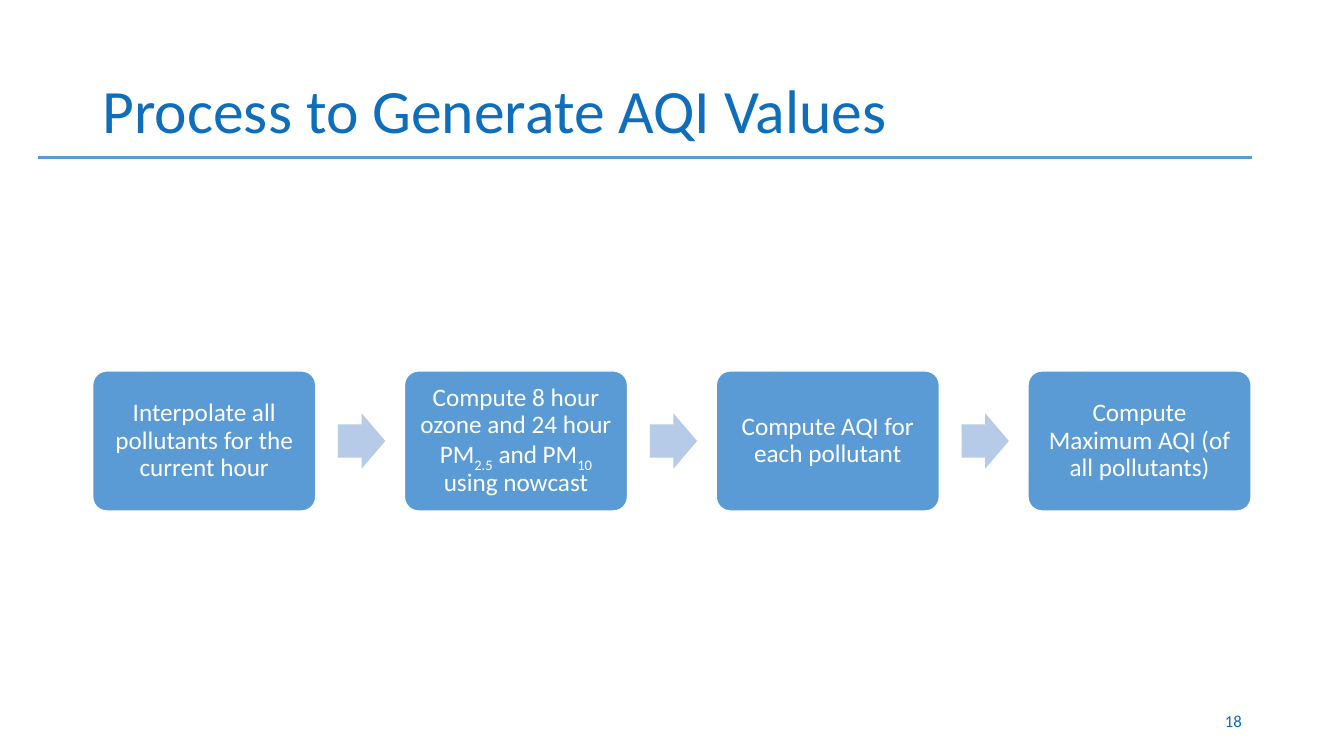
from lxml.etree import SubElement
from pptx import Presentation
from pptx.dml.color import RGBColor
from pptx.enum.shapes import MSO_CONNECTOR, MSO_SHAPE
from pptx.enum.text import MSO_ANCHOR, PP_ALIGN
from pptx.oxml.ns import qn
from pptx.util import Pt

NAVY = RGBColor(0x0E, 0x6E, 0xBB)
BLUE = RGBColor(0x5B, 0x9B, 0xD5)
PALE = RGBColor(0xB5, 0xCB, 0xE7)
WHITE = RGBColor(0xFF, 0xFF, 0xFF)

LEFT, TOP, WIDE, HIGH = 66.24, 265, 159.3, 100
PITCH = 222.7
ARROW_W, ARROW_H, ARROW_GAP = 33.8, 39.6, 15.9

STEPS = [
    ["Interpolate all pollutants for the current hour"],
    ["Compute 8 hour ozone and 24 hour PM", "2.5", " and PM", "10", " using nowcast"],
    ["Compute AQI for each pollutant"],
    ["Compute Maximum AQI (of all pollutants)"],
]


def write(shape, parts, size, color, align=PP_ALIGN.LEFT, spacing=1.0, inset=None):
    """Fill a shape with one paragraph, in which every second part is a subscript."""
    frame = shape.text_frame
    frame.word_wrap = True
    frame.vertical_anchor = MSO_ANCHOR.MIDDLE
    if inset is not None:
        frame.margin_left = frame.margin_right = Pt(inset)
        frame.margin_top = frame.margin_bottom = Pt(inset)
    para = frame.paragraphs[0]
    para.alignment = align
    para.line_spacing = spacing
    for index, part in enumerate(parts):
        run = para.add_run()
        run.text = part
        run.font.name = "Calibri"
        run.font.size = Pt(size)
        run.font.color.rgb = color
        if index % 2:
            run.font._element.set("baseline", "-25000")


def add_label(slide, left, top, width, height, text, size, **style):
    """Add a text box with one line of navy text."""
    box = slide.shapes.add_textbox(Pt(left), Pt(top), Pt(width), Pt(height))
    write(box, [text], size, NAVY, **style)


def add_rule(slide, left, right, top):
    """Add the line below the title."""
    rule = slide.shapes.add_connector(
        MSO_CONNECTOR.STRAIGHT, Pt(left), Pt(top), Pt(right), Pt(top))
    rule.line.color.rgb = BLUE
    rule.line.width = Pt(2)
    SubElement(rule._element.spPr, qn("a:effectLst"))


def add_block(slide, kind, left, top, width, height, fill, adjust):
    """Add a flat preset shape without an outline."""
    block = slide.shapes.add_shape(kind, Pt(left), Pt(top), Pt(width), Pt(height))
    block.shadow.inherit = False
    block.fill.solid()
    block.fill.fore_color.rgb = fill
    block.line.fill.background()
    for index, value in enumerate(adjust):
        block.adjustments[index] = value
    return block


def add_step(slide, left, parts):
    """Add one rounded step of the process."""
    step = add_block(slide, MSO_SHAPE.ROUNDED_RECTANGLE,
                     left, TOP, WIDE, HIGH, BLUE, [0.1])
    step.line.color.rgb = WHITE
    step.line.width = Pt(1)
    write(step, parts, 18, WHITE, align=PP_ALIGN.CENTER, spacing=0.9, inset=5)


def main():
    """Build the slide and save it."""
    deck = Presentation()
    deck.slide_width, deck.slide_height = Pt(960), Pt(540)
    slide = deck.slides.add_slide(deck.slide_layouts[6])
    add_rule(slide, 27.5, 894.2, 112.4)
    add_label(slide, LEFT, 28.8, 828, 104.4, "Process to Generate AQI Values", 44,
              spacing=0.9)
    add_label(slide, 678.24, 500.5, 216, 28.8, "18", 12, align=PP_ALIGN.RIGHT)
    for index, parts in enumerate(STEPS):
        left = LEFT + index * PITCH
        add_step(slide, left, parts)
        if index < len(STEPS) - 1:
            add_block(slide, MSO_SHAPE.RIGHT_ARROW, left + WIDE + ARROW_GAP,
                      TOP + (HIGH - ARROW_H) / 2, ARROW_W, ARROW_H, PALE, [0.6, 0.5])
    deck.save("out.pptx")


if __name__ == "__main__":
    main()
